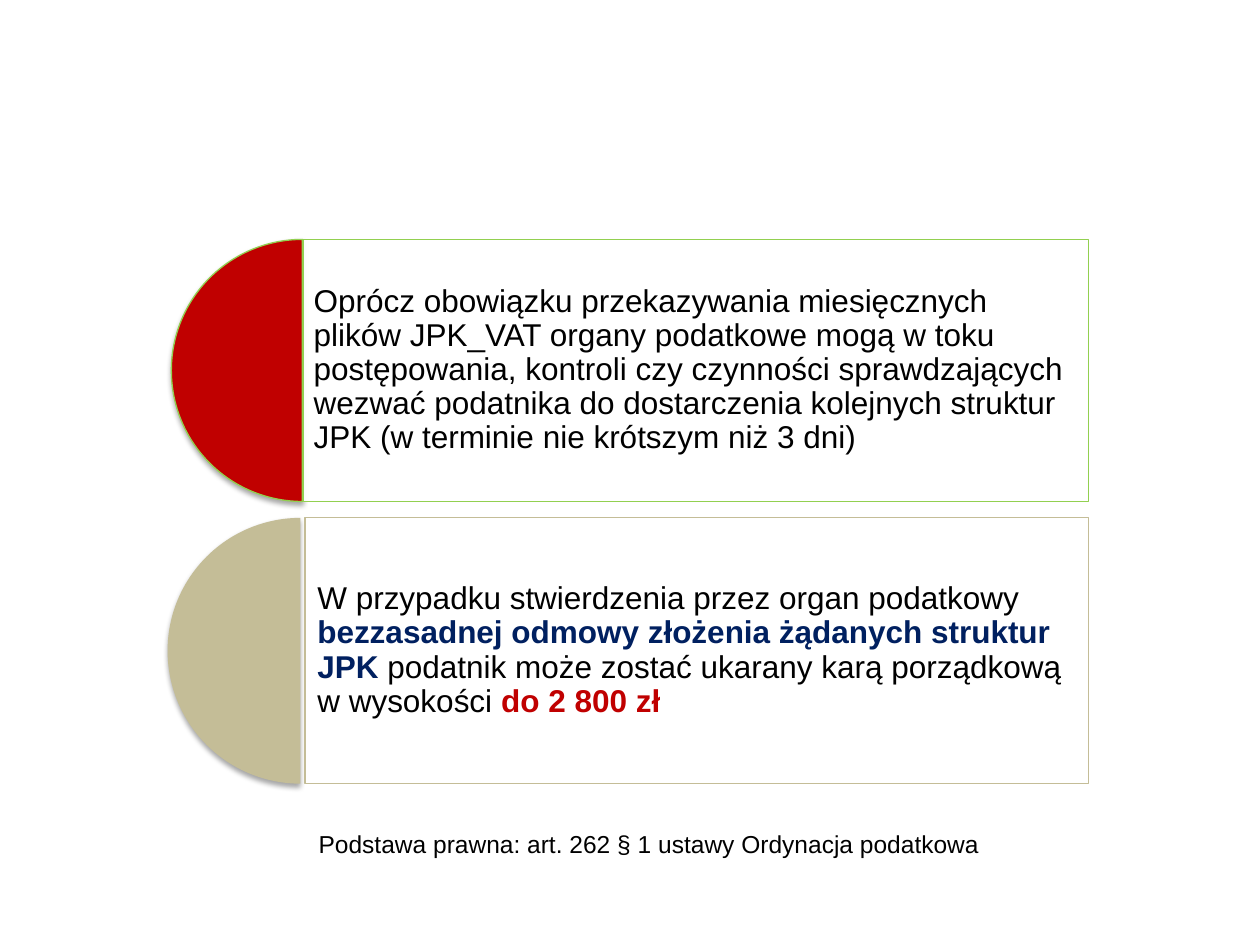
import pptx
import pptx.util
import pptx.dml.color
import pptx.enum.shapes
import pptx.enum.text
import pptx.oxml
import pptx.oxml.ns

COLORS = {
    "white": "FFFFFF",
    "black": "000000",
    "red": "C00000",
    "green": "92D050",
    "sand": "C4BD97",
    "navy": "002060",
}
COLS, ROWS = 100, 75
RIGHT = 86.4
NS = pptx.oxml.ns.nsdecls("a")


def rgb(name):
    return pptx.dml.color.RGBColor.from_string(COLORS[name])


class Deck:
    font = "Arial"

    def __init__(self):
        self.prs = pptx.Presentation()
        self.prs.slide_width = pptx.util.Inches(10)
        self.prs.slide_height = pptx.util.Inches(7.5)
        self.s = self.prs.slides.add_slide(self.prs.slide_layouts[6])

    def place(self, x, y, w, h):
        cw, rh = self.prs.slide_width / COLS, self.prs.slide_height / ROWS
        return [round(v) for v in (x * cw, y * rh, w * cw, h * rh)]

    def shape(self, kind, at, fill, line):
        sp = self.s.shapes.add_shape(kind, *self.place(*at))
        sp.shadow.inherit = False
        sp.fill.solid()
        sp.fill.fore_color.rgb = rgb(fill)
        if line:
            sp.line.color.rgb = rgb(line)
            sp.line.width = pptx.util.Pt(0.75)
        else:
            sp.line.fill.background()
        return sp

    def half_disc(self, x, y, size, fill, line=None):
        sp = self.shape(pptx.enum.shapes.MSO_SHAPE.PIE, (x, y, size, size), fill, line)
        sp.adjustments[0], sp.adjustments[1] = 54, 162
        effects = sp._element.spPr.find(pptx.oxml.ns.qn("a:effectLst"))
        effects.append(pptx.oxml.parse_xml(
            f'<a:outerShdw {NS} blurRad="39370" dist="22860" dir="5400000" rotWithShape="0">'
            f'<a:srgbClr val="{COLORS["black"]}"><a:alpha val="35000"/></a:srgbClr></a:outerShdw>'))

    def panel(self, x, y, h, line, inset, runs):
        sp = self.shape(pptx.enum.shapes.MSO_SHAPE.RECTANGLE, (x, y, RIGHT - x, h), "white", line)
        color = sp._element.spPr.find(".//" + pptx.oxml.ns.qn("a:srgbClr"))
        color.append(pptx.oxml.parse_xml(f'<a:alpha {NS} val="90000"/>'))
        p = self.text(sp.text_frame, runs, 18, inset, inset)
        sp.text_frame.vertical_anchor = pptx.enum.text.MSO_ANCHOR.MIDDLE
        p.line_spacing = 0.9
        p.space_after = pptx.util.Pt(4.2)

    def note(self, at, runs):
        sp = self.s.shapes.add_textbox(*self.place(*at))
        self.text(sp.text_frame, runs, 14, 0.1, 0.05)

    def text(self, tf, runs, size, inset_x, inset_y):
        tf.word_wrap = True
        tf.margin_left = tf.margin_right = pptx.util.Inches(inset_x)
        tf.margin_top = tf.margin_bottom = pptx.util.Inches(inset_y)
        p = tf.paragraphs[0]
        p.alignment = pptx.enum.text.PP_ALIGN.LEFT
        for words, color in runs:
            r = p.add_run()
            r.text = words
            r.font.name = self.font
            r.font.size = pptx.util.Pt(size)
            r.font.bold = color != "black"
            r.font.color.rgb = rgb(color)
        return p


def main():
    deck = Deck()
    deck.half_disc(13.3, 41.1, 21.1, "sand")
    deck.panel(24.2, 41.1, 21.1, "sand", 0.1, [
        ("W przypadku stwierdzenia przez organ podatkowy ", "black"),
        ("bezzasadnej odmowy złożenia żądanych struktur JPK ", "navy"),
        ("podatnik może zostać ukarany karą porządkową w wysokości ", "black"),
        ("do 2 800 zł", "red"),
    ])
    deck.half_disc(13.6, 19, 20.8, "red", "green")
    deck.panel(24.1, 19, 20.8, "green", 0.08, [
        ("Oprócz obowiązku przekazywania miesięcznych plików JPK_VAT organy podatkowe "
         "mogą w toku postępowania, kontroli czy czynności sprawdzających wezwać "
         "podatnika do dostarczenia kolejnych struktur JPK "
         "(w terminie nie krótszym niż 3 dni)", "black"),
    ])
    deck.note((24.3, 65.3, 67.2, 5.6), [
        ("Podstawa prawna: art. 262 § 1 ustawy Ordynacja podatkowa", "black"),
    ])
    deck.prs.save("out.pptx")


if __name__ == "__main__":
    main()
